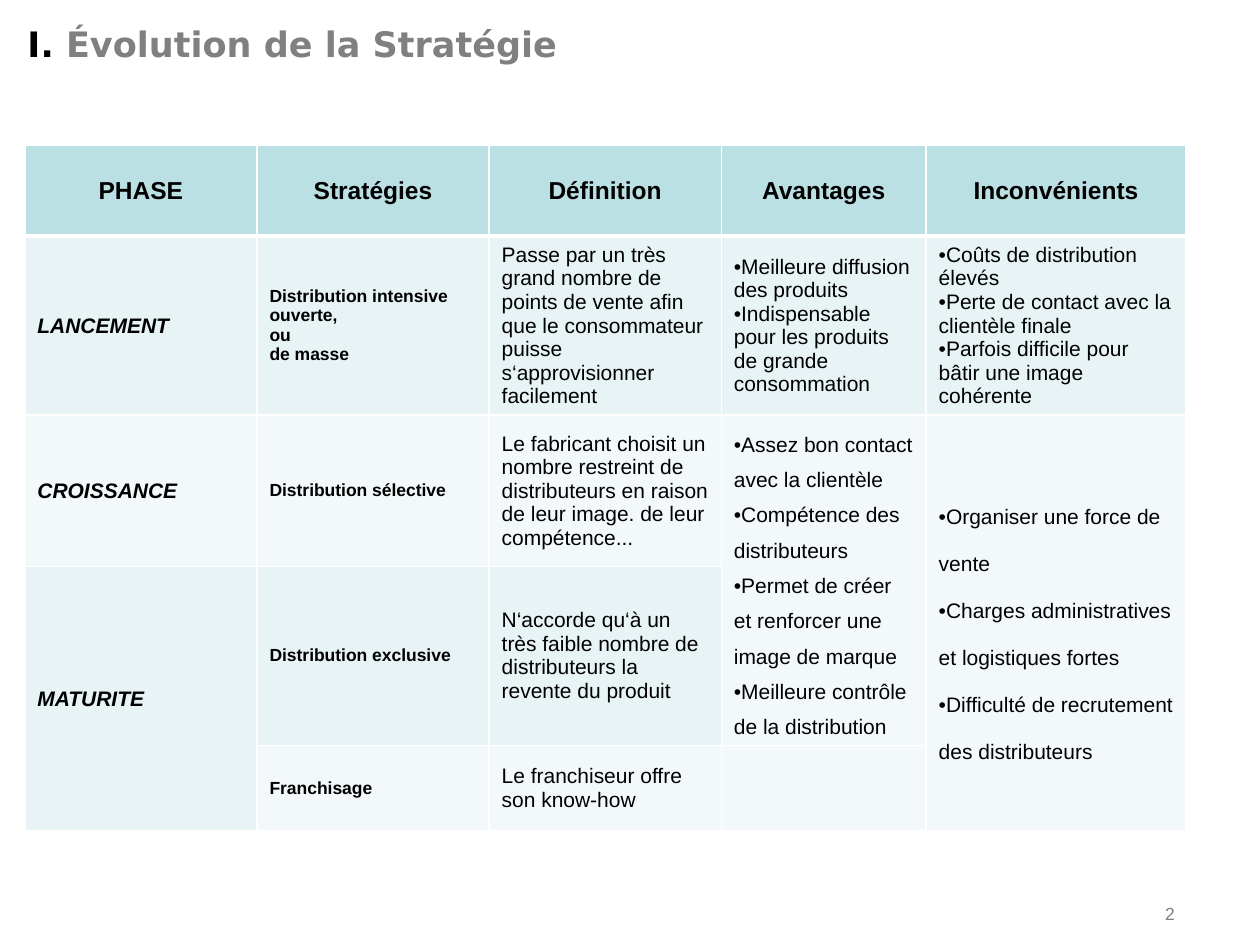
from lxml import etree
from pptx import Presentation
from pptx.dml.color import RGBColor
from pptx.enum.text import MSO_ANCHOR, MSO_AUTO_SIZE, PP_ALIGN
from pptx.oxml.ns import qn
from pptx.util import Cm, Pt

TOP, MIDDLE = MSO_ANCHOR.TOP, MSO_ANCHOR.MIDDLE
LEFT, CENTER, RIGHT = PP_ALIGN.LEFT, PP_ALIGN.CENTER, PP_ALIGN.RIGHT
NO_FIT = MSO_AUTO_SIZE.NONE

COLORS = {
    "text": "000000",
    "grey": "808080",
    "line": "FFFFFF",
    "header": "BBE0E3",
    "band_dark": "E7F3F4",
    "band_light": "F3F9FA",
}

COL_WIDTHS = [4.68, 4.68, 4.68, 4.13, 5.24]
ROW_HEIGHTS = [1.83, 3.61, 3.05, 3.6, 1.73]
BANDS = ["header", "band_dark", "band_light", "band_dark", "band_light"]
HEADERS = ["PHASE", "Stratégies", "Définition", "Avantages", "Inconvénients"]

# Text styles of the body columns
PHASE = {"size": 12, "bold": True, "italic": True}
STRATEGY = {"size": 10, "bold": True}
BODY = {"size": 12}
BULLETS = {"size": 12, "bullet": True}
COL_STYLES = [PHASE, STRATEGY, BODY, BULLETS, BULLETS]

# One list of paragraphs per cell; None is covered by the merged cell above
ROWS = [
    [["LANCEMENT"],
     ["Distribution intensive ouverte,", "ou", "de masse"],
     ["Passe par un très grand nombre de points de vente afin que le "
      "consommateur puisse s‘approvisionner facilement"],
     ["Meilleure diffusion des produits",
      "Indispensable pour les produits de grande consommation"],
     ["Coûts de distribution élevés",
      "Perte de contact avec la clientèle finale",
      "Parfois difficile pour bâtir une image cohérente"]],
    [["CROISSANCE"],
     ["Distribution sélective"],
     ["Le fabricant choisit un nombre restreint de distributeurs en raison "
      "de leur image. de leur compétence..."],
     ["Assez bon contact avec la clientèle",
      "Compétence des distributeurs",
      "Permet de créer et renforcer une image de marque",
      "Meilleure contrôle de la distribution"],
     ["Organiser une force de vente",
      "Charges administratives et logistiques fortes",
      "Difficulté de recrutement des distributeurs"]],
    [["MATURITE"],
     ["Distribution exclusive"],
     ["N‘accorde qu‘à un très faible nombre de distributeurs la revente "
      "du produit"],
     None,
     None],
    [None,
     ["Franchisage"],
     ["Le franchiseur offre son know-how"],
     [],
     None],
]
MERGES = [((2, 3), (3, 3)), ((2, 4), (4, 4)), ((3, 0), (4, 0))]
LINE_SPACING = {(2, 3): 1.5, (2, 4): 2.0}


def style_font(font, size, color="text", bold=False, italic=False, name="Arial"):
    font.name = name
    font.size = Pt(size)
    font.bold = bold
    font.italic = italic
    font.color.rgb = RGBColor.from_string(COLORS[color])


def add_bullet(p):
    pPr = p._p.get_or_add_pPr()
    pPr.set("marL", "0")
    pPr.set("indent", "0")
    etree.SubElement(pPr, qn("a:buFont"), typeface="Arial")
    etree.SubElement(pPr, qn("a:buChar"), char="•")


def set_borders(cell, **widths):
    tcPr = cell._tc.get_or_add_tcPr()
    for i, side in enumerate("LRTB"):
        ln = etree.Element(qn("a:ln" + side), w=str(Pt(widths.get(side, 1))))
        fill = etree.SubElement(ln, qn("a:solidFill"))
        etree.SubElement(fill, qn("a:srgbClr"), val=COLORS["line"])
        tcPr.insert(i, ln)


def fill_text(cell, paragraphs, align=LEFT, spacing=None, bullet=False, **font):
    tf = cell.text_frame
    tf.text = "\n".join(paragraphs)
    for p in tf.paragraphs:
        p.alignment = align
        if spacing:
            p.line_spacing = spacing
        if bullet:
            add_bullet(p)
        for r in p.runs:
            style_font(r.font, **font)


def add_title(slide, left, top, width, height):
    sp = slide.shapes.title
    sp.left, sp.top, sp.width, sp.height = left, top, width, height
    tf = sp.text_frame
    tf.auto_size = NO_FIT
    tf.vertical_anchor = TOP
    p = tf.paragraphs[0]
    p.alignment = LEFT
    for text, color in (("I. ", "text"), ("Évolution de la Stratégie", "grey")):
        r = p.add_run()
        r.text = text
        style_font(r.font, 20, color, bold=True, name="DejaVu Sans")


def add_strategy_table(slide, left, top):
    sp = slide.shapes.add_table(
        len(ROW_HEIGHTS), len(COL_WIDTHS), left, top,
        Cm(sum(COL_WIDTHS)), Cm(sum(ROW_HEIGHTS)))
    table = sp.table
    table.horz_banding = False
    for column, width in zip(table.columns, COL_WIDTHS):
        column.width = Cm(width)
    for row, height in zip(table.rows, ROW_HEIGHTS):
        row.height = Cm(height)
    for first, last in MERGES:
        table.cell(*first).merge(table.cell(*last))

    # Fills and rules, with a thick rule under the header
    for i, band in enumerate(BANDS):
        for j in range(len(COL_WIDTHS)):
            cell = table.cell(i, j)
            cell.vertical_anchor = MIDDLE
            cell.fill.solid()
            cell.fill.fore_color.rgb = RGBColor.from_string(COLORS[band])
            set_borders(cell, T=3 if i == 1 else 1, B=3 if i == 0 else 1)

    # Wording
    for j, header in enumerate(HEADERS):
        fill_text(table.cell(0, j), [header], CENTER, size=14, bold=True)
    for i, row in enumerate(ROWS, start=1):
        for j, paragraphs in enumerate(row):
            if paragraphs:
                fill_text(table.cell(i, j), paragraphs,
                          spacing=LINE_SPACING.get((i, j)), **COL_STYLES[j])


def add_page_number(slide, left, top, width, height):
    tf = slide.shapes.add_textbox(left, top, width, height).text_frame
    tf.word_wrap = True
    tf.vertical_anchor = MIDDLE
    tf.text = "2"
    p = tf.paragraphs[0]
    p.alignment = RIGHT
    style_font(p.runs[0].font, 10, "grey")


def main():
    prs = Presentation()
    prs.slide_width, prs.slide_height = Cm(25.4), Cm(19.05)
    slide = prs.slides.add_slide(prs.slide_layouts[5])
    add_title(slide, Cm(0.3), Cm(0.33), Cm(19.8), Cm(1))
    add_strategy_table(slide, Cm(0.5), Cm(2.93))
    add_page_number(slide, Cm(21.9), Cm(17.9), Cm(2.03), Cm(1.02))
    prs.save("out.pptx")


if __name__ == "__main__":
    main()
